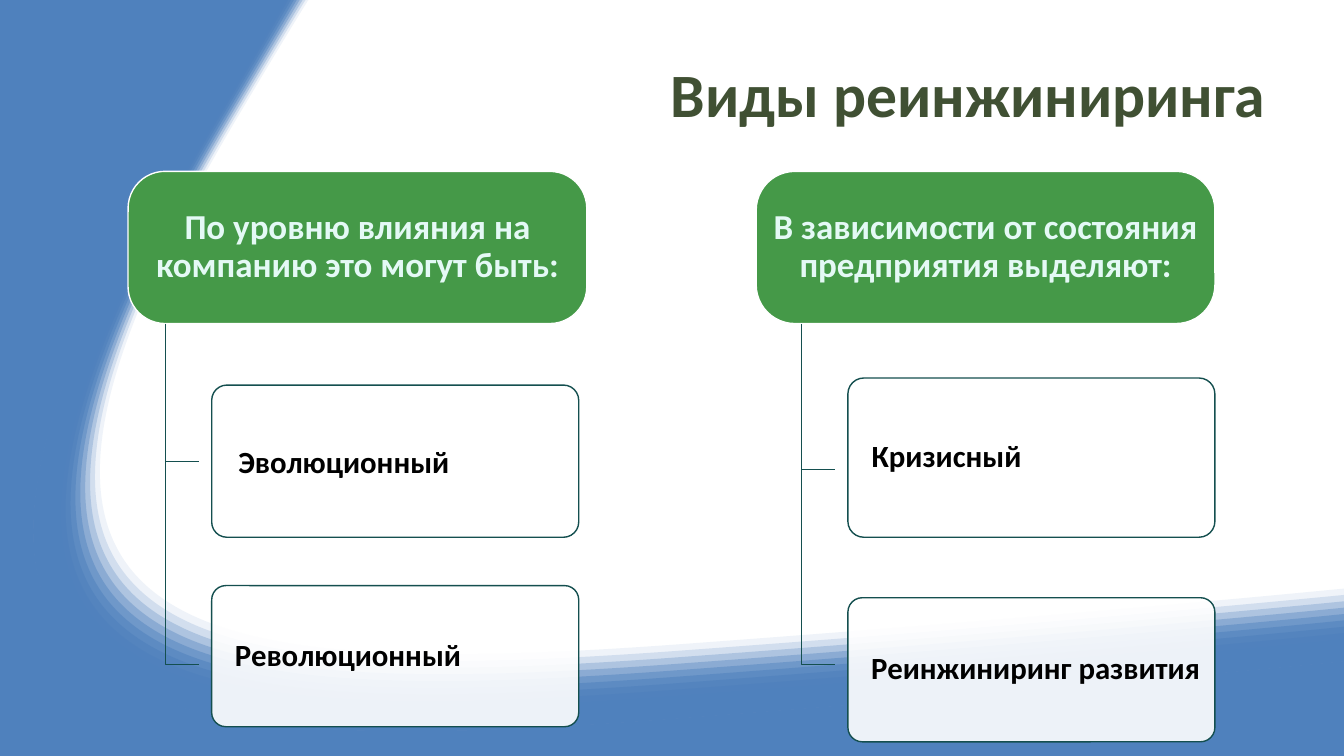
import pptx
import pptx.dml.color
import pptx.enum.shapes
import pptx.enum.text
import pptx.oxml.ns
import pptx.util
import lxml.etree
from pptx.util import Inches

COLORS = {
    "wave": "4F81BD", "title": "405033", "header": "459948", "header_text": "E4F9F5",
    "white": "FFFFFF", "outline": "144F4F", "item_text": "000000",
}
FONT = "Calibri"
WIDTH, HEIGHT = 13.33, 7.5
BAND_COUNT = 11

OUTER = [
    (13.33, 6.56), (13.33, 6.56), (10.75, 6.82), (6.55, 7.14), (1.06, 7.55),
    (-1.62, 7.12), (1.96, 1.15), (2.4, 0.41), (2.65, 0), (2.65, 0),
]
INNER_FIRST = [
    (13.33, 5.84), (13.31, 5.84), (10.85, 6.09), (6.9, 6.38), (1.61, 6.78),
    (-0.73, 6.32), (2.4, 1.09), (2.81, 0.4), (3.05, 0.01), (3.06, 0),
]
INNER_LAST = [
    (13.33, 6.47), (12.99, 6.51), (10.48, 6.75), (6.64, 7.04), (1.22, 7.45),
    (-1.42, 7.03), (2.11, 1.14), (2.48, 0.52), (2.71, 0.11), (2.77, 0),
]

COLUMNS = [
    {
        "left": 1.27, "stem": 0.37, "corner": 0.243,
        "header": "По уровню влияния на компанию это могут быть:",
        "items": [
            {"text": "Эволюционный", "top": 2.12, "height": 1.51,
             "branch": (1.61, 2.88), "inset": 0.06, "spacing": 1.0},
            {"text": "Революционный", "top": 4.11, "height": 1.4,
             "branch": (1.51, 4.89), "inset": 0.03, "spacing": 0.9},
        ],
    },
    {
        "left": 7.5, "stem": 0.45, "corner": 0.254,
        "header": "В зависимости от состояния предприятия выделяют:",
        "items": [
            {"text": "Кризисный", "top": 2.05, "height": 1.58,
             "branch": (1.69, 2.96), "inset": 0.03, "spacing": 0.9},
            {"text": "Реинжиниринг развития", "top": 4.23, "height": 1.43,
             "branch": (1.51, 4.89), "inset": 0.03, "spacing": 0.9},
        ],
    },
]


def rgb(name):
    return pptx.dml.color.RGBColor.from_string(COLORS[name])


def add_node(parent, name, **attributes):
    return lxml.etree.SubElement(parent, pptx.oxml.ns.qn("a:" + name), attributes)


def paint(shape, fill, line=None, opacity=100):
    shape.shadow.inherit = False
    if fill:
        shape.fill.solid()
        shape.fill.fore_color.rgb = rgb(fill)
        if opacity < 100:
            color = shape.element.spPr.find(".//" + pptx.oxml.ns.qn("a:srgbClr"))
            add_node(color, "alpha", val=str(round(opacity * 1000)))
    else:
        shape.fill.background()
    if line:
        shape.line.color.rgb = rgb(line)
        shape.line.width = pptx.util.Pt(1)
    else:
        shape.line.fill.background()


def write(shape, text, size, color, align, inset=None, spacing=None):
    frame = shape.text_frame
    frame.word_wrap = True
    frame.vertical_anchor = pptx.enum.text.MSO_ANCHOR.MIDDLE
    if inset is not None:
        frame.margin_left = frame.margin_right = Inches(inset)
        frame.margin_top = frame.margin_bottom = Inches(round(inset * 0.65, 2))
    para = frame.paragraphs[0]
    para.alignment = align
    if spacing:
        para.line_spacing = spacing
    span = para.add_run()
    span.text = text
    span.font.name = FONT
    span.font.size = pptx.util.Pt(size)
    span.font.bold = True
    span.font.color.rgb = rgb(color)
    return para


def outline(page, points, closed):
    corners = [(Inches(x), Inches(y)) for x, y in points]
    builder = page.shapes.build_freeform(*corners[0], scale=1.0)
    builder.add_line_segments(corners[1:], close=closed)
    return builder.convert_to_shape()


def add_segment(contour, name, points):
    segment = add_node(contour, name)
    for x, y in points:
        add_node(segment, "pt", x=str(Inches(x)), y=str(Inches(y)))


def add_curves(contour, controls):
    for start in range(1, len(controls), 3):
        add_segment(contour, "cubicBezTo", controls[start:start + 3])


def add_wave_layer(page, far_side, curved, opacity):
    frame = [(0, 0), (WIDTH, 0), (WIDTH, HEIGHT), (0, HEIGHT)]
    layer = outline(page, frame, True)
    contour = layer.element.find(".//" + pptx.oxml.ns.qn("a:path"))
    for segment in list(contour):
        contour.remove(segment)
    add_segment(contour, "moveTo", OUTER[:1])
    add_curves(contour, OUTER)
    if curved:
        add_segment(contour, "lnTo", far_side[:1])
        add_curves(contour, far_side)
    else:
        for corner in far_side:
            add_segment(contour, "lnTo", [corner])
    add_node(contour, "close")
    paint(layer, "wave", opacity=opacity)


def add_wave(page):
    add_wave_layer(page, [(0, 0), (0, HEIGHT), (WIDTH, HEIGHT)], False, 100)
    for band in range(BAND_COUNT):
        t = band / (BAND_COUNT - 1)
        inner = [(a + (c - a) * t, b + (d - b) * t)
                 for (a, b), (c, d) in zip(INNER_FIRST, INNER_LAST)]
        add_wave_layer(page, inner[::-1], True, 100 * (band + 1) / BAND_COUNT)


def add_title(page, left, top, width, height):
    title = page.shapes.title
    title.left, title.top = Inches(left), Inches(top)
    title.width, title.height = Inches(width), Inches(height)
    write(title, "Виды реинжиниринга", 44, "title", pptx.enum.text.PP_ALIGN.RIGHT)
    title.element.getparent().append(title.element)


def add_box(page, left, top, width, height, corner):
    box = page.shapes.add_shape(
        pptx.enum.shapes.MSO_SHAPE.ROUNDED_RECTANGLE,
        Inches(left), Inches(top), Inches(width), Inches(height))
    box.adjustments[0] = corner
    return box


def add_column(page, column, top, width):
    left = column["left"]
    header = add_box(page, left, top, width, 1.51, column["corner"])
    paint(header, "header", "white")
    write(header, column["header"], 25, "header_text",
          pptx.enum.text.PP_ALIGN.CENTER, 0.05, 0.9)
    stem = left + column["stem"]
    for item in column["items"]:
        start, end = (top + offset for offset in item["branch"])
        branch = outline(page, [(stem, start), (stem, end), (stem + 0.33, end)], False)
        paint(branch, None, "outline")
        box = add_box(page, stem + 0.46, top + item["top"], 3.64, item["height"], 0.1)
        paint(box, "white", "outline", 90)
        para = write(box, item["text"], 22, "item_text",
                     pptx.enum.text.PP_ALIGN.LEFT, item["inset"], item["spacing"])
        properties = para._p.get_or_add_pPr()
        properties.set("marL", str(Inches(0.16)))
        properties.set("indent", "0")


def main():
    deck = pptx.Presentation()
    deck.slide_width, deck.slide_height = Inches(WIDTH), Inches(HEIGHT)
    page = deck.slides.add_slide(deck.slide_layouts[5])
    page.background.fill.solid()
    page.background.fill.fore_color.rgb = rgb("white")
    add_wave(page)
    add_title(page, 1.73, 0.3, 10.93, 1.25)
    for column in COLUMNS:
        add_column(page, column, 1.7, 4.55)
    deck.save("out.pptx")


if __name__ == "__main__":
    main()
